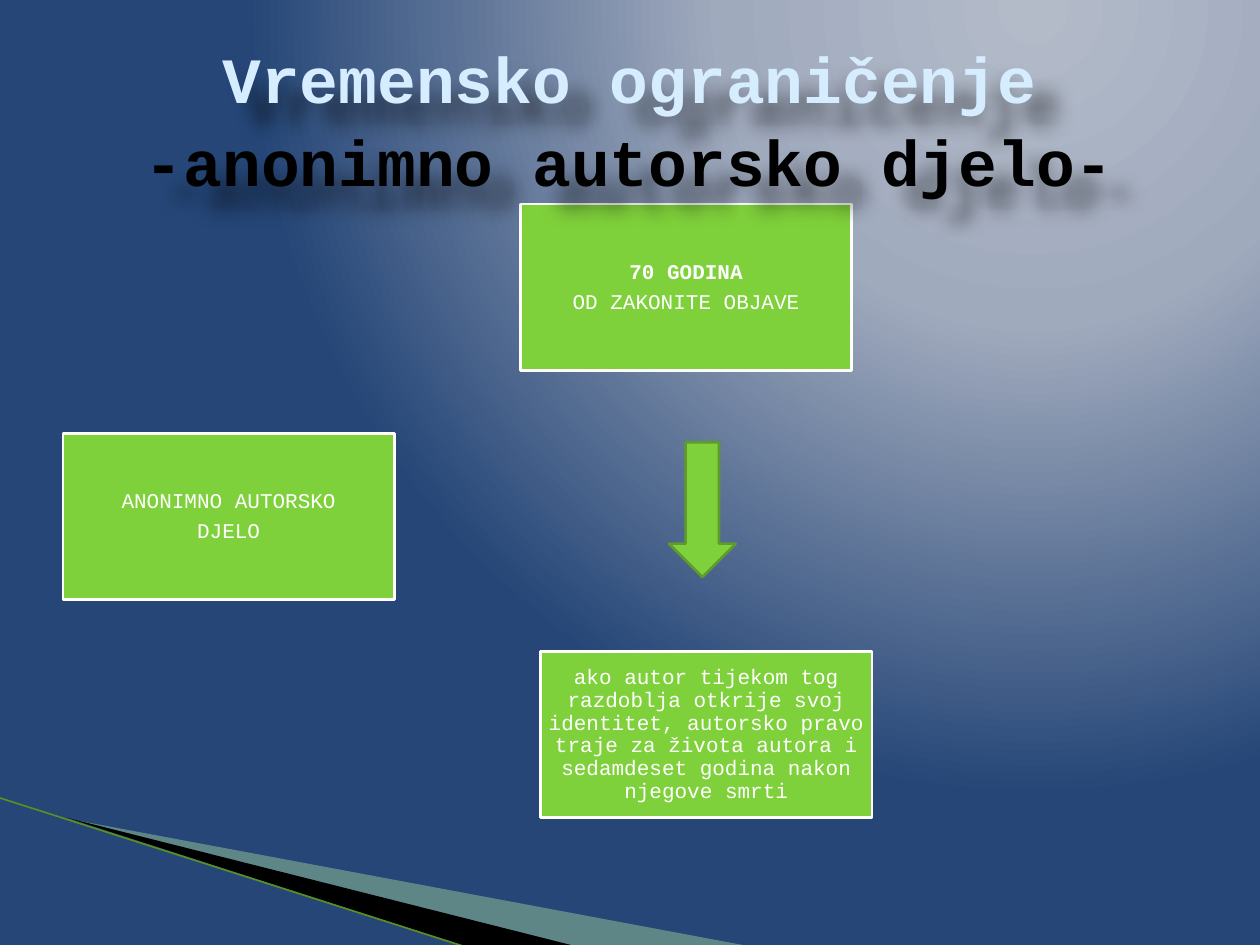
"""Build the slide on the time limit for anonymous works."""
import pptx
import pptx.dml.color
import pptx.enum.shapes
import pptx.enum.text
import pptx.oxml
import pptx.util
from pptx.oxml.ns import qn

W, H = 10, 7.5
FONT = "Courier New"
GREEN, WHITE = "7FD13B", "FFFFFF"
BOX_W, BOX_H = 2.63, 1.32
NS = 'xmlns:a="http://schemas.openxmlformats.org/drawingml/2006/main"'

TITLE = [("Vremensko ograničenje", "D6ECFF"), ("-anonimno autorsko djelo-", "000000")]
BOXES = [
    (0.5, 3.44, [("ANONIMNO AUTORSKO", False), ("DJELO", False)]),
    (4.13, 1.62, [("70 GODINA", True), ("OD ZAKONITE OBJAVE", False)]),
    (4.29, 5.17, [("ako autor tijekom tog razdoblja otkrije svoj identitet, autorsko pravo "
                   "traje za života autora i sedamdeset godina nakon njegove smrti", False)]),
]
WEDGES = [
    ([(0.55, 6.5), (5.95, 7.51), (4.56, 7.51)], "B8E7A1", 40),
    ([(0.53, 6.49), (4.57, 7.51), (3.72, 7.52)], "000000", 100),
]
GRADIENT = [(0, "B3BBC9"), (40, "A0AABD"), (100, "254677")]


def rgb(value):
    """Turn a hex string into a colour."""
    return pptx.dml.color.RGBColor.from_string(value)


def inches(*values):
    """Turn numbers into a list of lengths."""
    return [pptx.util.Inches(v) for v in values]


def assign(obj, **values):
    """Set several attributes of one object."""
    for name, value in values.items():
        setattr(obj, name, value)


def paint(sp, fill, line=None, width=1.5):
    """Give a shape a flat fill and an optional outline."""
    sp.shadow.inherit = False
    sp.fill.solid()
    sp.fill.fore_color.rgb = rgb(fill)
    if line:
        sp.line.color.rgb = rgb(line)
        sp.line.width = pptx.util.Pt(width)
    else:
        sp.line.fill.background()


def set_frame(tf, margins):
    """Wrap and centre a text frame vertically."""
    left, top = inches(*margins)
    assign(tf, word_wrap=True, vertical_anchor=pptx.enum.text.MSO_ANCHOR.MIDDLE,
           margin_left=left, margin_right=left, margin_top=top, margin_bottom=top)


def add_run(p, text, size, color, bold):
    """Add one formatted run."""
    r = p.add_run()
    r.text = text
    assign(r.font, name=FONT, size=pptx.util.Pt(size), bold=bold)
    r.font.color.rgb = rgb(color)


def add_background(slide):
    """Fill the background with a radial gradient."""
    slide.background.fill.gradient()
    old = next(slide.element.iter(qn("a:gradFill")))
    stops = "".join(f'<a:gs pos="{pos * 1000}"><a:srgbClr val="{c}"/></a:gs>' for pos, c in GRADIENT)
    old.getparent().replace(old, pptx.oxml.parse_xml(
        f'<a:gradFill {NS} rotWithShape="1"><a:gsLst>{stops}</a:gsLst><a:path path="circle">'
        '<a:fillToRect l="65000" t="0" r="0" b="98000"/></a:path></a:gradFill>'))


def add_wedges(shapes):
    """Draw the corner wedges and their edge line."""
    for points, color, alpha in WEDGES:
        start, *rest = [tuple(inches(*point)) for point in points]
        builder = shapes.build_freeform(*start)
        builder.add_line_segments(rest)
        sp = builder.convert_to_shape()
        paint(sp, color)
        if alpha < 100:
            clr = next(sp.element.spPr.iter(qn("a:srgbClr")))
            clr.append(pptx.oxml.parse_xml(f'<a:alpha {NS} val="{alpha * 1000}"/>'))
    edge = shapes.add_connector(pptx.enum.shapes.MSO_CONNECTOR.STRAIGHT, *inches(-0.01, 6.33, 3.71, 7.52))
    edge.line.color.rgb = rgb("569022")
    edge.line.width = pptx.util.Pt(0.95)
    edge.element.spPr.append(pptx.oxml.parse_xml(f"<a:effectLst {NS}/>"))


def add_box(shapes, left, top, lines):
    """Draw one green box with centred text."""
    sp = shapes.add_shape(pptx.enum.shapes.MSO_SHAPE.RECTANGLE, *inches(left, top, BOX_W, BOX_H))
    paint(sp, GREEN, WHITE)
    tf = sp.text_frame
    set_frame(tf, (0.01, 0.01))
    for i, (text, bold) in enumerate(lines):
        p = tf.add_paragraph() if i else tf.paragraphs[0]
        assign(p, alignment=pptx.enum.text.PP_ALIGN.CENTER, line_spacing=0.9,
               space_after=pptx.util.Pt(4.2))
        add_run(p, text, 12, WHITE, bold)


def add_title(shapes):
    """Write the two-line title with a soft shadow."""
    sp = shapes.add_textbox(*inches(0.5, 0.3, 9, 1.25))
    set_frame(sp.text_frame, (0.1, 0.05))
    p = sp.text_frame.paragraphs[0]
    assign(p, alignment=pptx.enum.text.PP_ALIGN.CENTER, line_spacing=1.07)
    for i, (text, color) in enumerate(TITLE):
        if i:
            p.add_line_break()
        add_run(p, text, 36.9, color, True)
    sp.element.spPr.append(pptx.oxml.parse_xml(
        f'<a:effectLst {NS}><a:outerShdw blurRad="127000" dist="220000" dir="2700000" algn="tl">'
        '<a:srgbClr val="000000"><a:alpha val="50000"/></a:srgbClr></a:outerShdw></a:effectLst>'))


def main():
    """Assemble and save the slide."""
    prs = pptx.Presentation()
    prs.slide_width, prs.slide_height = inches(W, H)
    slide = prs.slides.add_slide(prs.slide_layouts[6])
    shapes = slide.shapes
    add_background(slide)
    add_wedges(shapes)
    for box in BOXES:
        add_box(shapes, *box)
    add_title(shapes)
    arrow = shapes.add_shape(pptx.enum.shapes.MSO_SHAPE.DOWN_ARROW, *inches(5.31, 3.51, 0.53, 1.07))
    paint(arrow, GREEN, "5E9B2C")
    prs.save("out.pptx")


if __name__ == "__main__":
    main()
